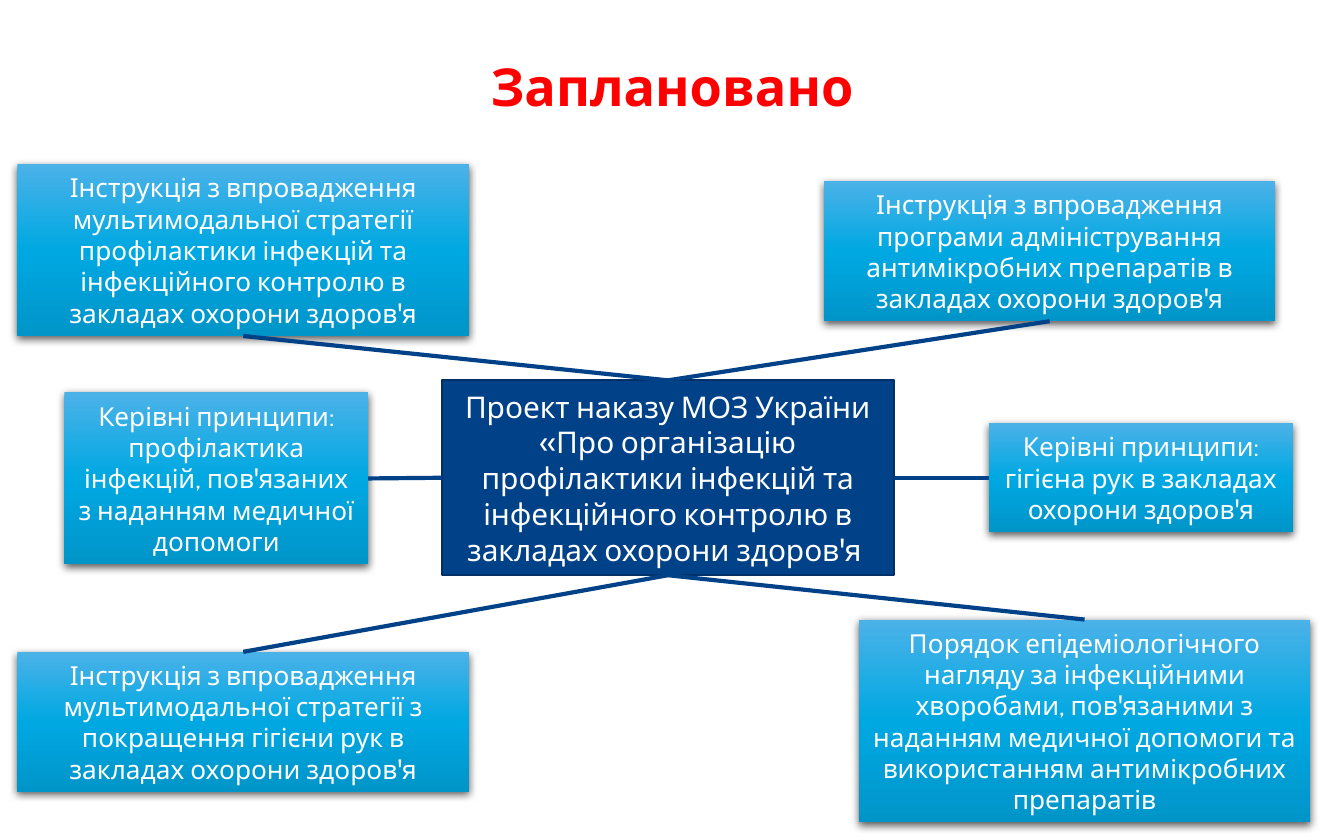
from copy import deepcopy

from lxml import etree
from pptx import Presentation
from pptx.dml.color import RGBColor
from pptx.enum.shapes import MSO_CONNECTOR, MSO_SHAPE
from pptx.enum.text import MSO_ANCHOR, MSO_AUTO_SIZE, PP_ALIGN
from pptx.oxml.ns import qn
from pptx.util import Inches, Pt

RECTANGLE = MSO_SHAPE.RECTANGLE
STRAIGHT = MSO_CONNECTOR.STRAIGHT
CENTER = PP_ALIGN.CENTER
MIDDLE = MSO_ANCHOR.MIDDLE
FIT_SHAPE = MSO_AUTO_SIZE.SHAPE_TO_FIT_TEXT
TOP, LEFT, BOTTOM, RIGHT = range(4)

FONT = "Cabin"
COLORS = {
    "title": "FF0000",
    "text": "FFFFFF",
    "center": "004188",
    "center_border": "003065",
    "shadow": "000000",
}
GRADIENT = [(0, "4BB2E8"), (0.5, "00A8E2"), (1, "0095C9")]

TITLE = "Заплановано"
ORDER = ("Проект наказу МОЗ України «Про організацію профілактики інфекцій та "
         "інфекційного контролю в закладах охорони здоров'я ")
ORDER_BOX = (3.29, 2.83, 3.36, 1.45)

# Text, box (left, top, width, height), side of the order, side of the document
DOCUMENTS = [
    ("Інструкція з впровадження мультимодальної стратегії профілактики інфекцій "
     "та інфекційного контролю в закладах охорони здоров'я",
     (0.13, 1.22, 3.36, 1.28), TOP, BOTTOM),
    ("Інструкція з впровадження мультимодальної стратегії з покращення гігієни "
     "рук в закладах охорони здоров'я",
     (0.13, 4.85, 3.36, 1.04), BOTTOM, TOP),
    ("Інструкція з впровадження програми адміністрування антимікробних "
     "препаратів в закладах охорони здоров'я",
     (6.13, 1.35, 3.36, 1.04), TOP, BOTTOM),
    ("Порядок епідеміологічного нагляду за інфекційними хворобами, пов'язаними "
     "з наданням медичної допомоги та використанням антимікробних препаратів",
     (6.39, 4.61, 3.36, 1.51), BOTTOM, TOP),
    ("Керівні принципи: профілактика інфекцій, пов'язаних з наданням медичної "
     "допомоги",
     (0.48, 2.92, 2.26, 1.28), LEFT, RIGHT),
    ("Керівні принципи: гігієна рук в закладах охорони здоров'я",
     (7.36, 3.15, 2.26, 0.81), RIGHT, LEFT),
]


def rgb(name):
    return RGBColor.from_string(COLORS[name])


def write_text(shape, text, size, color, bold=False):
    frame = shape.text_frame
    frame.word_wrap = True
    frame.auto_size = FIT_SHAPE
    frame.vertical_anchor = MIDDLE
    paragraph = frame.paragraphs[0]
    paragraph.text = text
    paragraph.alignment = CENTER
    paragraph.font.name = FONT
    paragraph.font.size = Pt(size)
    paragraph.font.bold = bold
    paragraph.font.color.rgb = rgb(color)


def fill_gradient(shape):
    """Fill from top to bottom with the stops of GRADIENT."""
    shape.fill.gradient()
    shape.fill.gradient_angle = 270
    stop_list = shape.fill._xPr.find(".//" + qn("a:gsLst"))
    stop_list.append(deepcopy(stop_list[-1]))
    for stop, (position, color) in zip(shape.fill.gradient_stops, GRADIENT):
        stop.position = position
        stop.color.rgb = RGBColor.from_string(color)


def add_soft_shadow(shape):
    shape.shadow.inherit = False
    effects = shape._element.spPr.find(qn("a:effectLst"))
    shadow = etree.SubElement(
        effects, qn("a:outerShdw"), blurRad=str(Pt(4.5)), dist=str(Pt(1.5)),
        dir="5400000", algn="ctr", rotWithShape="0")
    color = etree.SubElement(shadow, qn("a:srgbClr"), val=COLORS["shadow"])
    etree.SubElement(color, qn("a:alpha"), val="63000")


def add_title(slide, box):
    shape = slide.shapes.add_textbox(*map(Inches, box))
    write_text(shape, TITLE, 28, "title", bold=True)


def add_order(slide, box):
    shape = slide.shapes.add_shape(RECTANGLE, *map(Inches, box))
    shape.shadow.inherit = False
    shape.fill.solid()
    shape.fill.fore_color.rgb = rgb("center")
    shape.line.color.rgb = rgb("center_border")
    shape.line.width = Pt(1)
    write_text(shape, ORDER, 16, "text")
    return shape


def add_document(slide, box, text):
    shape = slide.shapes.add_shape(RECTANGLE, *map(Inches, box))
    fill_gradient(shape)
    shape.line.fill.background()
    add_soft_shadow(shape)
    write_text(shape, text, 14, "text")
    return shape


def connect(slide, start, start_side, end, end_side):
    connector = slide.shapes.add_connector(STRAIGHT, 0, 0, 0, 0)
    connector.begin_connect(start, start_side)
    connector.end_connect(end, end_side)
    connector.line.color.rgb = rgb("center")
    connector.line.width = Pt(2.25)
    etree.SubElement(connector._element.spPr, qn("a:effectLst"))


def main():
    presentation = Presentation()
    presentation.slide_width = Inches(10)
    presentation.slide_height = Inches(6.25)
    slide = presentation.slides.add_slide(presentation.slide_layouts[6])

    add_title(slide, (0, 0.35, 10, 0.57))
    order = add_order(slide, ORDER_BOX)
    for text, box, order_side, document_side in DOCUMENTS:
        document = add_document(slide, box, text)
        connect(slide, order, order_side, document, document_side)

    presentation.save("out.pptx")


if __name__ == "__main__":
    main()
